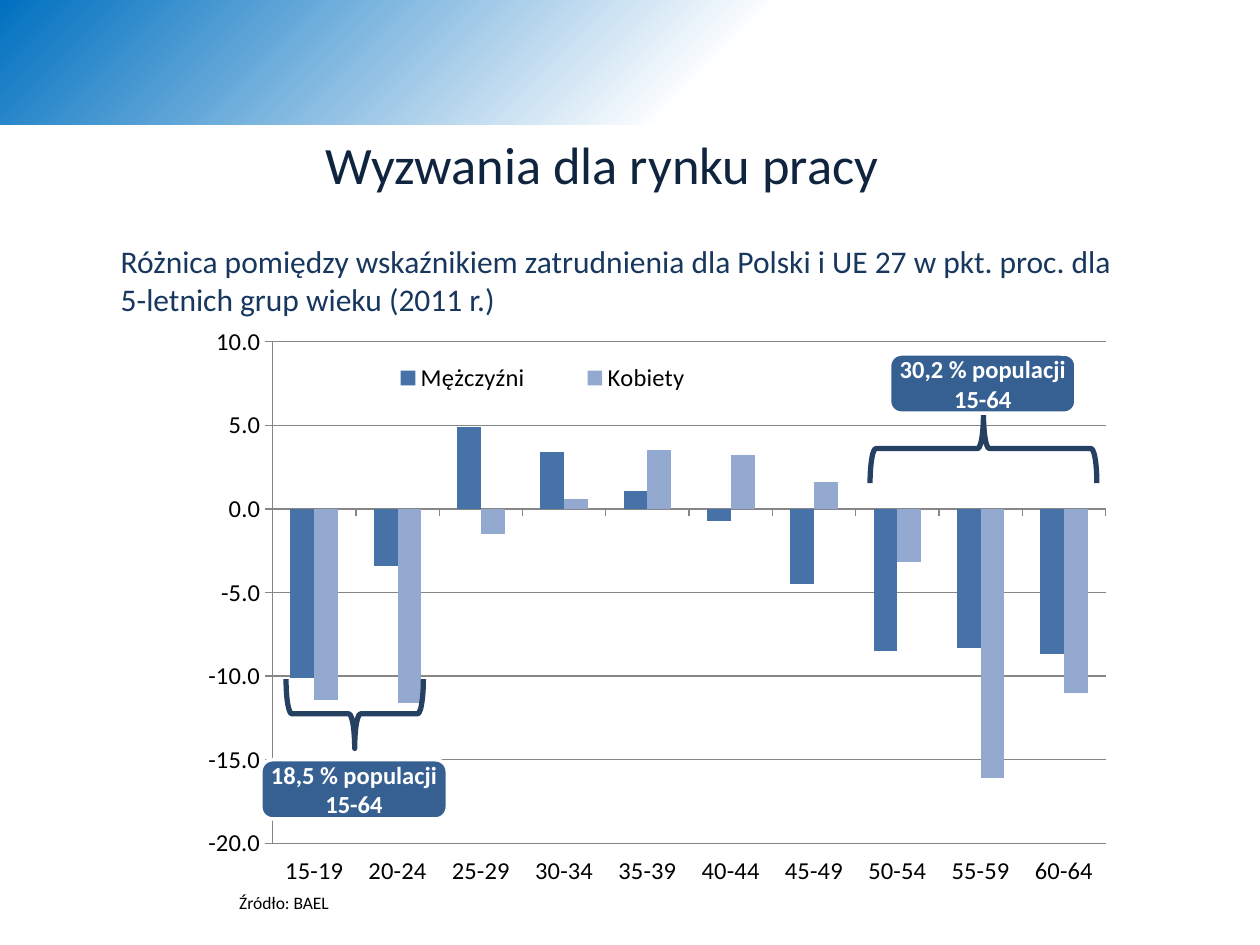
"""Build the slide on labour market challenges."""
from lxml import etree
from pptx import Presentation
from pptx.chart.data import CategoryChartData
from pptx.dml.color import RGBColor
from pptx.enum.chart import XL_CHART_TYPE, XL_LEGEND_POSITION, XL_TICK_LABEL_POSITION, XL_TICK_MARK
from pptx.enum.shapes import MSO_SHAPE
from pptx.enum.text import MSO_ANCHOR, PP_ALIGN
from pptx.oxml.ns import qn
from pptx.util import Inches, Pt

COLUMN = XL_CHART_TYPE.COLUMN_CLUSTERED
TOP = XL_LEGEND_POSITION.TOP
LOW = XL_TICK_LABEL_POSITION.LOW
OUT = XL_TICK_MARK.OUTSIDE
RECT, ROUND, BRACE = MSO_SHAPE.RECTANGLE, MSO_SHAPE.ROUNDED_RECTANGLE, MSO_SHAPE.LEFT_BRACE
MIDDLE, CENTER, LEFT = MSO_ANCHOR.MIDDLE, PP_ALIGN.CENTER, PP_ALIGN.LEFT


def style(font, size, color, bold=False):
    form = {"name": "Calibri", "size": Pt(size), "bold": bold}
    for key, value in form.items():
        setattr(font, key, value)
    font.color.rgb = RGBColor.from_string(color)


def place(parent, index, box, inner=False):
    for old in parent.findall(qn("c:layout")):
        parent.remove(old)
    layout = etree.Element(qn("c:layout"))
    manual = etree.SubElement(layout, qn("c:manualLayout"))
    marks = [("layoutTarget", "inner")] if inner else []
    marks += [("xMode", "edge"), ("yMode", "edge")] + list(zip("xywh", box))
    for tag, value in marks:
        etree.SubElement(manual, qn("c:" + tag)).set("val", str(value))
    parent.insert(index, layout)


prs = Presentation()
prs.slide_width, prs.slide_height = Inches(10), Inches(7.5)
slide = prs.slides.add_slide(prs.slide_layouts[5])
shapes = slide.shapes

banner = shapes.add_shape(RECT, 0, 0, Inches(6.34), Inches(0.99))
banner.shadow.inherit = False
banner.line.fill.background()
banner.fill.gradient()
banner.fill.gradient_angle = 315
for stop, spot, color in zip(banner.fill.gradient_stops, (0, 0.85), ("0070C0", "FFFFFF")):
    stop.position = spot
    stop.color.rgb = RGBColor.from_string(color)

title = shapes.title
title.left, title.top, title.width, title.height = [Inches(n) for n in (0.7, 0.99, 8.16, 0.62)]
title.text_frame.text = "Wyzwania dla rynku pracy"
title.text_frame.vertical_anchor = MIDDLE
title.text_frame.paragraphs[0].alignment = CENTER
style(title.text_frame.paragraphs[0].font, 30, "0F243E")

notes = [
    ((0.86, 1.87, 8.23, 0.71), 18, "17375E",
     "Różnica pomiędzy wskaźnikiem zatrudnienia dla Polski i UE 27 w pkt. proc. dla "
     "5-letnich grup wieku (2011 r.)"),
    ((1.8, 7.03, 0.94, 0.27), 10, "000000", "Źródło: BAEL"),
]
for box, size, color, text in notes:
    frame = shapes.add_textbox(*[Inches(n) for n in box]).text_frame
    frame.word_wrap = True
    frame.text = text
    frame.paragraphs[0].alignment = LEFT
    style(frame.paragraphs[0].font, size, color)

data = CategoryChartData(number_format="#,##0.0")
data.categories = [f"{age}-{age + 4}" for age in range(15, 65, 5)]
data.add_series("Mężczyźni", (-10.1, -3.4, 4.9, 3.4, 1.1, -0.7, -4.5, -8.5, -8.3, -8.7))
data.add_series("Kobiety", (-11.4, -11.6, -1.5, 0.6, 3.5, 3.2, 1.6, -3.2, -16.1, -11))
area = [Inches(n) for n in (1.51, 2.58, 7.27, 4.45)]
chart = shapes.add_chart(COLUMN, *area, data).chart
chart.has_title = False
style(chart.font, 14, "000000")

plot = chart.plots[0]
plot.gap_width, plot.overlap, plot.vary_by_categories = 150, 0, False
for series, color in zip(plot.series, ("4672A8", "93A9CF")):
    series.invert_if_negative = False
    series.format.fill.solid()
    series.format.fill.fore_color.rgb = RGBColor.from_string(color)

ages, scale = chart.category_axis, chart.value_axis
scale.minimum_scale, scale.maximum_scale, scale.major_unit = -20, 10, 5
scale.has_major_gridlines = True
scale.tick_labels.number_format = "#,##0.0"
scale.tick_labels.number_format_is_linked = False
ages.tick_label_position = LOW
for axis in (ages, scale):
    axis.major_tick_mark = OUT
    style(axis.tick_labels.font, 14, "000000")
for part in (ages, scale, scale.major_gridlines):
    part.format.line.color.rgb = RGBColor.from_string("868686")
    part.format.line.width = Pt(0.75)

chart.has_legend = True
legend = chart.legend
legend.position = TOP
legend.include_in_layout = False
style(legend.font, 14, "000000")
place(chart.element.find(".//" + qn("c:plotArea")), 0, (0.09, 0.03, 0.91, 0.9), True)
place(chart.element.find(".//" + qn("c:legend")), 1, (0.17, 0.06, 0.43, 0.07))

for left, top, high, turn in ((2.54, 5.12, 1.09, 270), (7.53, 2.66, 1.8, 90)):
    brace = shapes.add_shape(BRACE, Inches(left), Inches(top), Inches(0.55), Inches(high))
    brace.rotation = turn
    brace.shadow.inherit = False
    brace.fill.background()
    brace.line.color.rgb = RGBColor.from_string("254061")
    brace.line.width = Pt(3)

for left, top, share in ((2.07, 6.03, "18,5 %"), (7.06, 2.81, "30,2 %")):
    label = shapes.add_shape(ROUND, Inches(left), Inches(top), Inches(1.48), Inches(0.47))
    label.adjustments[0] = 0.2
    label.shadow.inherit = False
    label.fill.solid()
    label.fill.fore_color.rgb = RGBColor.from_string("376092")
    label.line.color.rgb = RGBColor.from_string("FFFFFF")
    label.line.width = Pt(2)
    frame = label.text_frame
    for side in ("left", "right", "top", "bottom"):
        setattr(frame, "margin_" + side, Inches(0.05))
    frame.word_wrap = True
    frame.vertical_anchor = MIDDLE
    frame.text = share + " populacji 15-64"
    frame.paragraphs[0].alignment = CENTER
    style(frame.paragraphs[0].font, 14, "FFFFFF", True)

prs.save("out.pptx")
